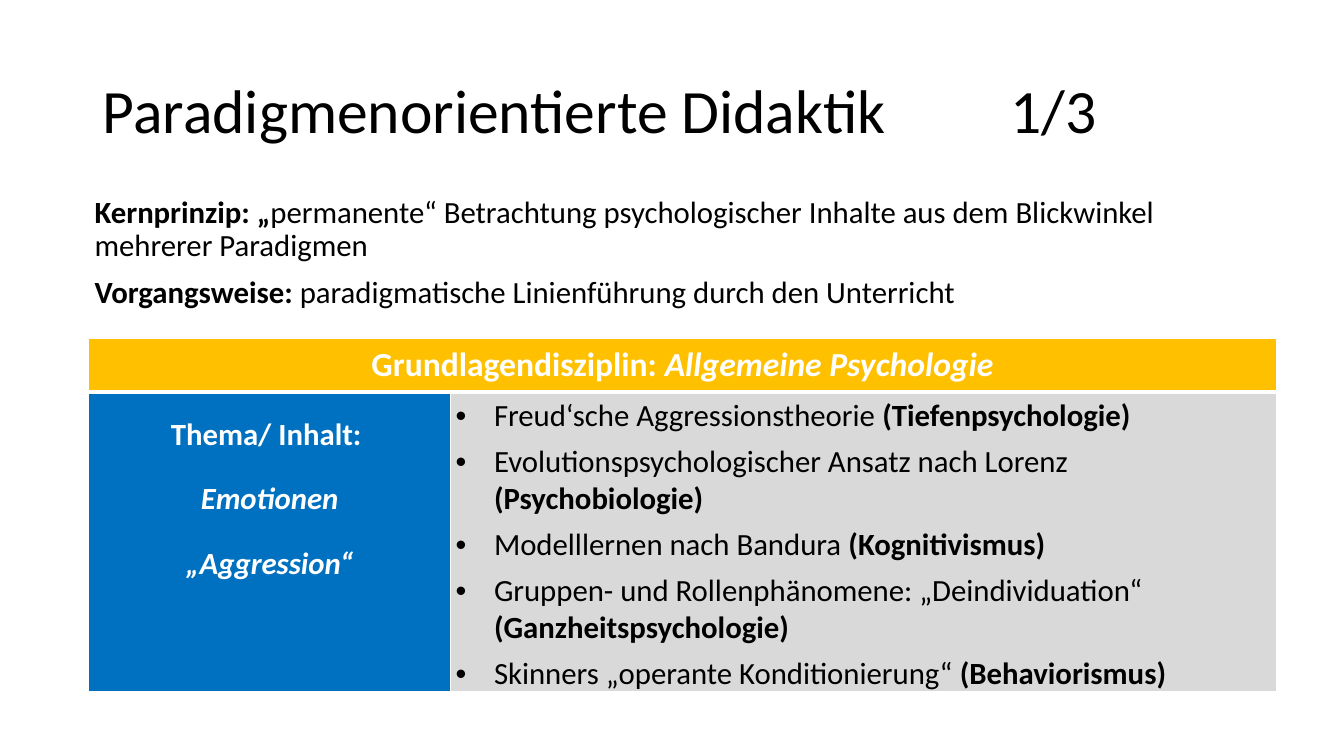
from pptx import Presentation
from pptx.dml.color import RGBColor
from pptx.enum.text import MSO_ANCHOR, MSO_AUTO_SIZE, PP_ALIGN
from pptx.oxml import parse_xml
from pptx.oxml.ns import nsdecls
from pptx.util import Inches, Pt

BLACK, WHITE = "000000", "FFFFFF"
AMBER, BLUE, GREY = "FFC000", "0070C0", "D9D9D9"

PRINCIPLES = [
    ("Kernprinzip: „",
     "permanente“ Betrachtung psychologischer Inhalte aus dem Blickwinkel mehrerer Paradigmen"),
    ("Vorgangsweise: ", "paradigmatische Linienführung durch den Unterricht"),
]
THEORIES = [
    ("Freud‘sche Aggressionstheorie ", "(Tiefenpsychologie)"),
    ("Evolutionspsychologischer Ansatz nach Lorenz ", "(Psychobiologie)"),
    ("Modelllernen nach Bandura ", "(Kognitivismus)"),
    ("Gruppen- und Rollenphänomene: „Deindividuation“ ", "(Ganzheitspsychologie)"),
    ("Skinners „operante Konditionierung“ ", "(Behaviorismus)"),
]


def rgb(value):
    return RGBColor.from_string(value)


def add_run(p, text, size, color=BLACK, **style):
    r = p.add_run()
    r.text = text
    for name, value in {"name": "Calibri", "size": Pt(size), "bold": False, **style}.items():
        setattr(r.font, name, value)
    r.font.color.rgb = rgb(color)


def fill_text(tf, paragraphs, size, color=BLACK, **layout):
    """Write paragraphs given as lists of (text, font style) runs."""
    for i, runs in enumerate(paragraphs):
        p = tf.paragraphs[0] if i == 0 else tf.add_paragraph()
        for name, value in layout.items():
            setattr(p, name, value)
        for text, style in runs:
            add_run(p, text, size, color, **style)


def add_bullets(tf):
    for p in tf.paragraphs:
        pPr = p._p.get_or_add_pPr()
        pPr.set("marL", str(Inches(0.38)))
        pPr.set("indent", str(-Inches(0.38)))
        pPr.append(parse_xml(f'<a:buFont {nsdecls("a")} typeface="Arial"/>'))
        pPr.append(parse_xml(f'<a:buChar {nsdecls("a")} char="•"/>'))


def format_cell(cell, color, margins, bottom=1, top=1):
    cell.fill.solid()
    cell.fill.fore_color.rgb = rgb(color)
    for side, value in zip(("left", "top", "right", "bottom"), margins):
        setattr(cell, f"margin_{side}", Inches(value))
    tcPr = cell._tc.get_or_add_tcPr()
    for i, (side, width) in enumerate({"L": 1, "R": 1, "T": top, "B": bottom}.items()):
        tcPr.insert(i, parse_xml(
            f'<a:ln{side} {nsdecls("a")} w="{Pt(width)}"><a:solidFill>'
            f'<a:srgbClr val="{WHITE}"/></a:solidFill></a:ln{side}>'))


def set_title(s, text):
    title = s.shapes.title
    title.left, title.top, title.width, title.height = map(Inches, (0.92, 0.4, 11.5, 1.45))
    tf = title.text_frame
    tf.auto_size = MSO_AUTO_SIZE.NONE
    tf.vertical_anchor = MSO_ANCHOR.MIDDLE
    fill_text(tf, [[(text, {})]], 44, alignment=PP_ALIGN.LEFT, line_spacing=0.9)


def add_principles(s):
    tf = s.shapes.add_textbox(*map(Inches, (0.84, 1.9, 11.5, 1.4))).text_frame
    tf.word_wrap = True
    fill_text(tf, [[(label, {"bold": True}), (text, {})] for label, text in PRINCIPLES],
              22, line_spacing=0.9, space_before=Pt(10))


def add_topic_table(s):
    table = s.shapes.add_table(2, 2, *map(Inches, (0.88, 3.36, 11.78, 3.5))).table
    for column, width in zip(table.columns, (3.59, 8.19)):
        column.width = Inches(width)
    for row, height in zip(table.rows, (0.53, 2.97)):
        row.height = Inches(height)
    header, topic, theories = table.cell(0, 0), table.cell(1, 0), table.cell(1, 1)
    header.merge(table.cell(0, 1))
    for cell in (header, table.cell(0, 1)):
        format_cell(cell, AMBER, (0.12, 0.06, 0.12, 0.06), bottom=3)
    for cell, color in ((topic, BLUE), (theories, GREY)):
        format_cell(cell, color, (0.05, 0.05, 0.05, 0), top=3)

    bold, bold_italic = {"bold": True}, {"bold": True, "italic": True}
    centered = {"alignment": PP_ALIGN.CENTER, "space_before": Pt(6)}
    fill_text(header.text_frame,
              [[("Grundlagendisziplin: ", bold), ("Allgemeine Psychologie", bold_italic)]],
              24, WHITE, **centered)
    fill_text(topic.text_frame,
              [[("Thema/ Inhalt: ", bold)], [("Emotionen", bold_italic)],
               [("„Aggression“", bold_italic)]],
              22, WHITE, line_spacing=1.5, **centered)
    fill_text(theories.text_frame,
              [[(theory, {}), (paradigm, bold)] for theory, paradigm in THEORIES],
              22, space_before=Pt(6))
    add_bullets(theories.text_frame)


def main():
    prs = Presentation()
    prs.slide_width, prs.slide_height = Inches(13.33), Inches(7.5)
    s = prs.slides.add_slide(prs.slide_layouts[5])
    set_title(s, "Paradigmenorientierte Didaktik \t\t\t1/3")
    add_principles(s)
    add_topic_table(s)
    prs.save("out.pptx")


if __name__ == "__main__":
    main()
